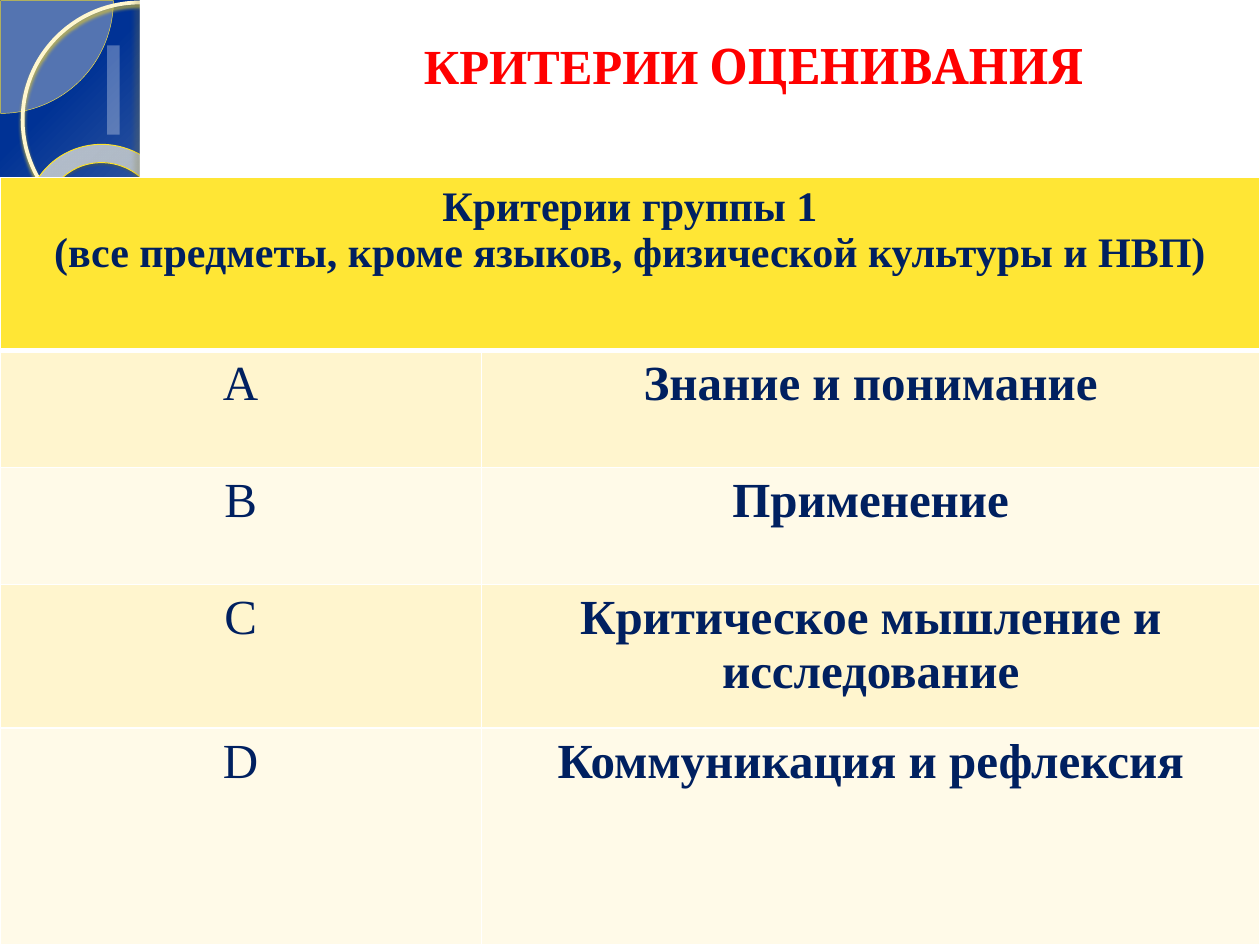
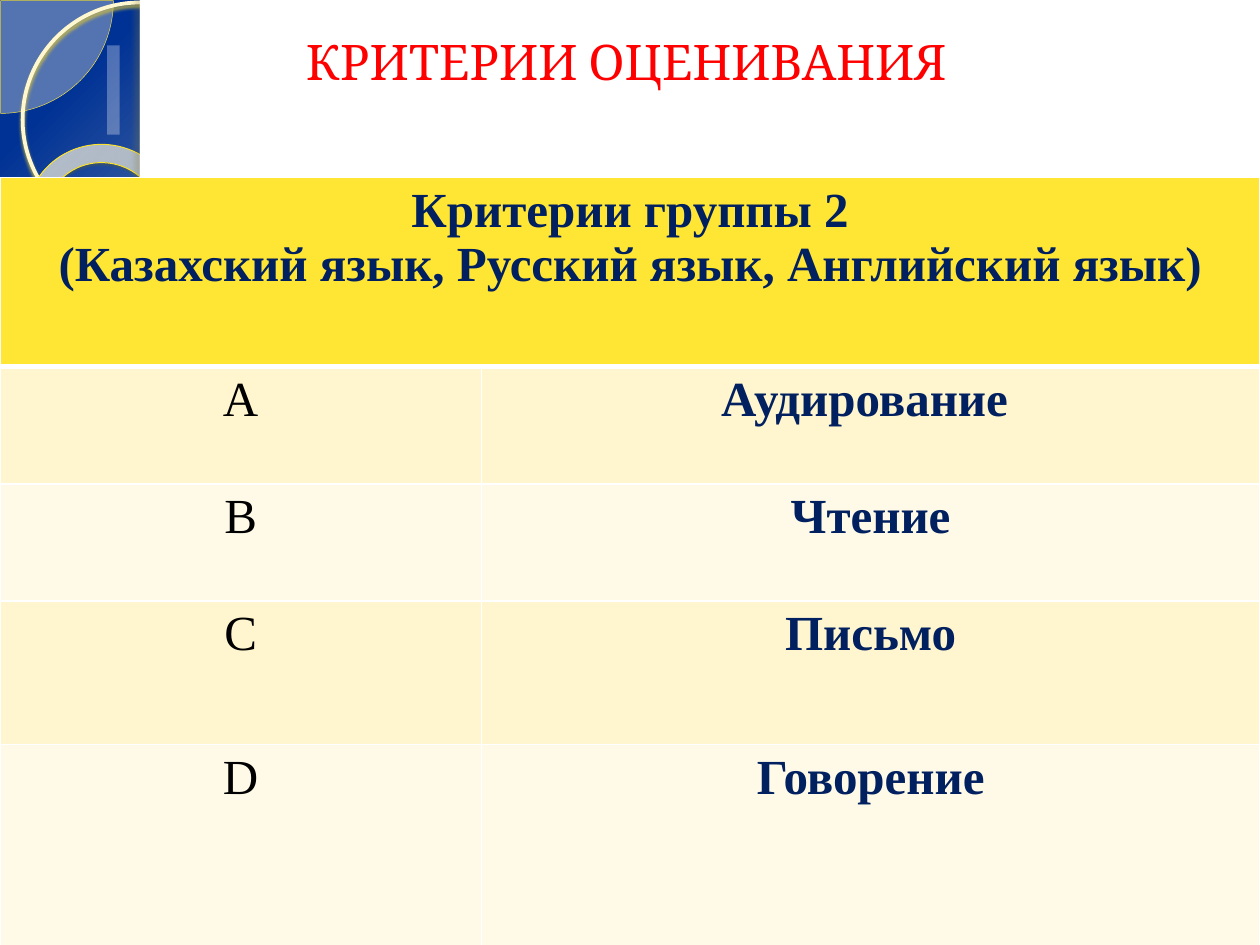
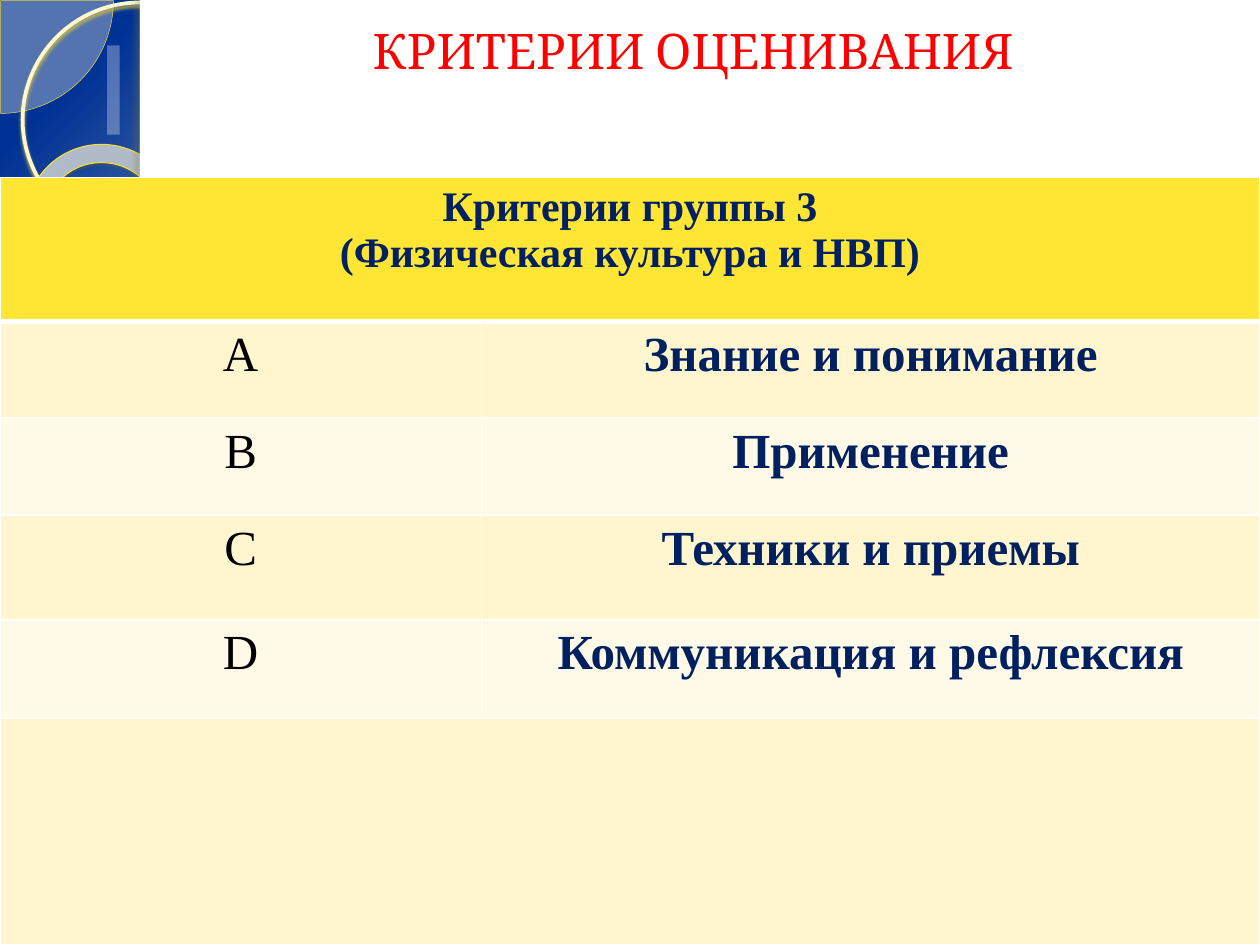
from pptx import Presentation
from pptx.dml.color import RGBColor
from pptx.enum.shapes import MSO_SHAPE as SHAPE
from pptx.enum.text import MSO_ANCHOR as ANCHOR, MSO_AUTO_SIZE as AUTO, PP_ALIGN as ALIGN
from pptx.oxml import parse_xml
from pptx.oxml.ns import nsdecls
from pptx.util import Inches, Pt

W, H = 10, 7.5
TABLE_TOP = 1.41
COLUMNS = (0.382, 0.618)
SANS_TITLE, SERIF = "Cambria", "Times New Roman"
C = {
    "red": "FF0000", "navy": "002060", "black": "000000", "white": "FFFFFF",
    "header": "FFE635", "odd": "FFF5CE", "even": "FFFAE8",
    "blue": "003295", "cream": "FFF4C7", "pale": "FFF9E4",
    "pie": "FFFCED", "pie_line": "FFE63E", "ring": "FFF7CF", "ring_glow": "D7C33B",
    "donut_in": "FFFDF3", "donut_mid": "FFFEF9", "donut_out": "FFE747",
    "donut_line": "FFE429", "donut_shade": "776A11", "edge_shade": "827836",
}


def xml(tag, body, **attrs):
    pairs = "".join(f' {k}="{v}"' for k, v in attrs.items())
    return parse_xml(f'<a:{tag} {nsdecls("a")}{pairs}>{body}</a:{tag}>')


def color_xml(name, alpha=100):
    return f'<a:srgbClr val="{C[name]}"><a:alpha val="{alpha * 1000}"/></a:srgbClr>'


def set_gradient(owner, fill, stops, direction):
    """Give the fill of owner any number of (position, colour, alpha) stops."""
    fill.gradient()
    old = owner.xpath(".//a:gradFill")[0]
    body = "".join(f'<a:gs pos="{pos * 1000}">{color_xml(name, alpha)}</a:gs>'
                   for pos, name, alpha in stops)
    old.getparent().replace(old, xml("gradFill", f"<a:gsLst>{body}</a:gsLst>{direction}",
                                     rotWithShape=1))


def add_figure(slide, kind, box, fill=None, alpha=100, line=None, shadow=None):
    """shadow is (colour, alpha, blur, distance, angle)."""
    sp = slide.shapes.add_shape(kind, *map(Inches, box))
    sp.shadow.inherit = False
    if fill:
        sp.fill.solid()
        sp.fill.fore_color.rgb = RGBColor.from_string(C[fill])
        if alpha < 100:
            sp.element.xpath(".//p:spPr/a:solidFill/a:srgbClr")[0].append(
                xml("alpha", "", val=alpha * 1000))
    else:
        sp.fill.background()
    if line:
        sp.line.color.rgb = RGBColor.from_string(C[line[0]])
        sp.line.width = Pt(line[1])
    else:
        sp.line.fill.background()
    if shadow:
        name, opacity, blur, dist, angle = shadow
        sp.element.xpath(".//a:effectLst")[0].append(
            xml("outerShdw", color_xml(name, opacity), blurRad=Pt(blur), dist=Pt(dist),
                dir=angle * 60000, algn="tl", rotWithShape=0))
    return sp


def build_backdrop(layout, slide):
    """Draw the shared corner ornament on slide, then move it to the layout."""
    set_gradient(layout.element, layout.background.fill,
                 [(7, "blue", 100), (50, "cream", 100), (100, "pale", 100)],
                 '<a:lin ang="2700000" scaled="0"/>')
    panel = 1.11
    pie = add_figure(slide, SHAPE.PIE, (-0.89, -0.89, 1.79, 1.79), "pie", 33, ("pie_line", 0.25))
    pie.adjustments[0], pie.adjustments[1] = 0, 54
    ring = add_figure(slide, SHAPE.OVAL, (0.18, 0.02, 1.86, 1.86), line=("ring", 2.15),
                      shadow=("ring_glow", 85, 2, 2, 90))
    donut = add_figure(slide, SHAPE.DONUT, (0.2, 1.15, 1.23, 1.21), line=("donut_line", 0.58),
                       shadow=("donut_shade", 35, 1, 1.2, 75))
    donut.adjustments[0] = 0.12
    donut.rotation = 38.6
    set_gradient(donut.element, donut.fill,
                 [(0, "donut_in", 70), (70, "donut_mid", 55), (100, "donut_out", 60)],
                 '<a:path path="circle"><a:fillToRect l="-408000" t="-50000" r="508000"'
                 ' b="150000"/></a:path>')
    page = add_figure(slide, SHAPE.RECTANGLE, (panel, 0, W - panel, H), "white")
    edge = add_figure(slide, SHAPE.RECTANGLE, (panel, 0, 0.08, H), "white",
                      shadow=("edge_shade", 25, 3, 3, 180))
    for i, sp in enumerate((pie, ring, donut, page, edge)):
        sp.element.xpath(".//p:cNvPr")[0].set("id", str(100 + i))
        layout.shapes.element.append(sp.element)


def write(p, text, size=28, font=SERIF, color="navy", bold=False):
    p.alignment = ALIGN.CENTER
    for i, part in enumerate(text.split("\n")):
        if i:
            p.add_line_break()
        r = p.add_run()
        r.text = part
        r.font.size, r.font.name, r.font.bold = Pt(size), font, bold
        r.font.color.rgb = RGBColor.from_string(C[color])


def place_title(slide, box, runs, bottom, wrap=True):
    """Runs are (text, font, bold); a deep bottom inset lifts the line."""
    title = slide.shapes.title
    title.left, title.top, title.width, title.height = map(Inches, box)
    tf = title.text_frame
    tf.auto_size, tf.word_wrap, tf.vertical_anchor = AUTO.NONE, wrap, ANCHOR.MIDDLE
    tf.margin_top, tf.margin_bottom = 0, Inches(bottom)
    for text, font, bold in runs:
        write(tf.paragraphs[0], text, font=font, color="red", bold=bold)
    slide.shapes.element.append(title.element)


def style_cell(cell, fill, top=1, bottom=1):
    cell.fill.solid()
    cell.fill.fore_color.rgb = RGBColor.from_string(C[fill])
    sides = (("L", 1), ("R", 1), ("T", top), ("B", bottom))
    for i, (side, width) in enumerate(sides):
        cell.fill._xPr.insert(i, xml(f"ln{side}", f"<a:solidFill>{color_xml('white')}</a:solidFill>",
                                     w=Pt(width)))


def add_criteria_table(slide, box, heights, header, header_size, criteria, letter_color):
    left, top, width, _ = box
    shape = slide.shapes.add_table(len(heights), len(COLUMNS), *map(Inches, box))
    table = shape.table
    for col, share in zip(table.columns, COLUMNS):
        col.width = Inches(width * share)
    for i, height in enumerate(heights):
        table.rows[i].height = Inches(height)
        for cell in table.rows[i].cells:
            fill = "header" if i == 0 else "odd" if i % 2 else "even"
            style_cell(cell, fill, top=3 if i == 1 else 1, bottom=1 if i else 3)
    for i in (0, *range(len(criteria) + 1, len(heights))):
        table.cell(i, 0).merge(table.cell(i, 1))
    write(table.cell(0, 0).text_frame.paragraphs[0], header, size=header_size, bold=True)
    for i, (letter, name) in enumerate(zip("ABCD", criteria), 1):
        write(table.cell(i, 0).text_frame.paragraphs[0], letter, color=letter_color)
        write(table.cell(i, 1).text_frame.paragraphs[0], name, bold=True)


PLAIN_TITLE = [("КРИТЕРИИ ОЦЕНИВАНИЯ", SANS_TITLE, False)]
SLIDES = [
    dict(
        title=dict(box=(3.2, 0.23, 5.56, 0.57), bottom=0, wrap=False,
                   runs=[("КРИТЕРИИ", SERIF, True), (" ОЦЕНИВАНИЯ", SANS_TITLE, True)]),
        table=dict(heights=(1.37, 0.93, 0.93, 1.14, 1.72), header_size=24, letter_color="navy",
                   header="Критерии группы 1\n"
                          "(все предметы, кроме языков, физической культуры и НВП)",
                   criteria=("Знание и понимание", "Применение",
                             "Критическое мышление и исследование",
                             "Коммуникация и рефлексия")),
    ),
    dict(
        title=dict(box=(0.47, 0.39, 9, 0.62), bottom=0.44, runs=PLAIN_TITLE),
        table=dict(heights=(1.5, 0.93, 0.93, 1.14, 1.72), header_size=28, letter_color="black",
                   header="Критерии группы 2\n(Казахский язык, Русский язык, Английский язык)",
                   criteria=("Аудирование ", "Чтение", "Письмо", "Говорение")),
    ),
    dict(
        title=dict(box=(1, 0.31, 9, 0.62), bottom=0.44, runs=PLAIN_TITLE),
        table=dict(heights=(1.14, 0.77, 0.77, 0.83, 0.78, 1.8), header_size=24,
                   letter_color="black",
                   header="Критерии группы 3\n(Физическая культура и НВП)",
                   criteria=("Знание и понимание", "Применение", "Техники и приемы",
                             "Коммуникация и рефлексия")),
    ),
]


def main():
    prs = Presentation()
    prs.slide_width, prs.slide_height = Inches(W), Inches(H)
    layout = prs.slide_layouts[5]
    for i, content in enumerate(SLIDES):
        slide = prs.slides.add_slide(layout)
        if i == 0:
            build_backdrop(layout, slide)
        add_figure(slide, SHAPE.RECTANGLE, (0.85, 0.36, 0.1, 0.71), "white", 30)
        table = content["table"]
        add_criteria_table(slide, (0, TABLE_TOP, W, sum(table["heights"])), **table)
        place_title(slide, **content["title"])
    prs.save("out.pptx")


if __name__ == "__main__":
    main()
